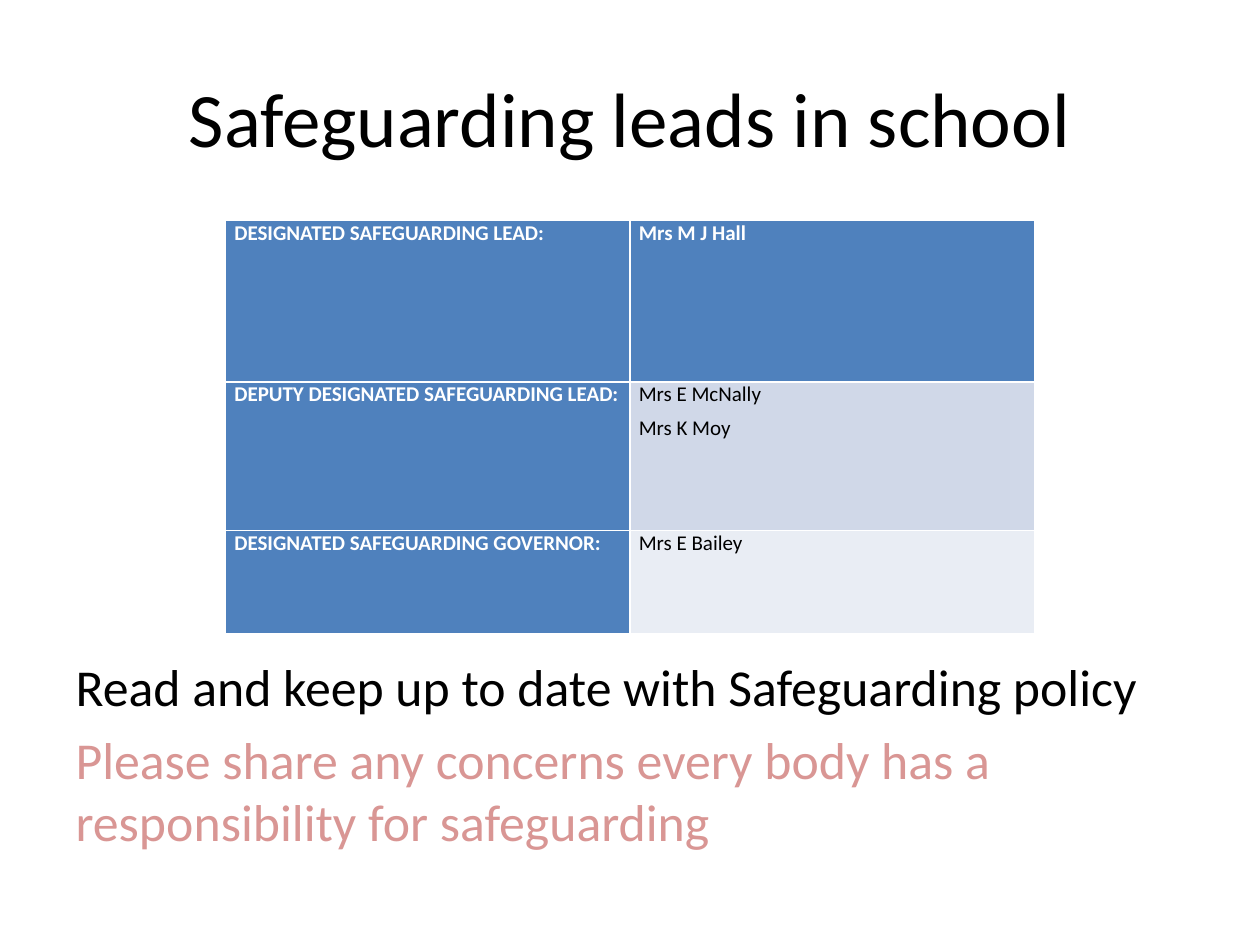
from pptx import Presentation
from pptx.dml.color import RGBColor
from pptx.enum.text import MSO_ANCHOR as ANCHOR, MSO_AUTO_SIZE as AUTOSIZE, PP_ALIGN as ALIGN
from pptx.util import Inches, Pt

BLUE, WHITE, BLACK, PINK = "4F81BD", "FFFFFF", "000000", "D99694"
LEADS = [
    ("DESIGNATED SAFEGUARDING LEAD:", ["Mrs M J Hall"], 1.28, BLUE),
    ("DEPUTY DESIGNATED SAFEGUARDING LEAD:", ["Mrs E McNally", "Mrs K Moy"], 1.18, "D0D8E8"),
    ("DESIGNATED SAFEGUARDING GOVERNOR:", ["Mrs E Bailey"], 0.82, "E9EDF4"),
]
REMINDERS = [
    ("Read and keep up to date with Safeguarding policy", BLACK),
    ("Please share any concerns every body has a responsibility for safeguarding", PINK),
]


def rgb(value):
    """Return the colour for a hex string."""
    return RGBColor.from_string(value)


def apply(obj, values):
    """Set each attribute of obj from a dict."""
    for name, value in values.items():
        setattr(obj, name, value)


def add_line(tf, i, text, size, color, bold=False, **spacing):
    """Write paragraph i of a text frame and return it."""
    p = tf.paragraphs[0] if i == 0 else tf.add_paragraph()
    apply(p, spacing)
    r = p.add_run()
    r.text = text
    apply(r.font, {"name": "Calibri", "size": Pt(size), "bold": bold})
    r.font.color.rgb = rgb(color)
    return p


def place(sp, left, top, width, height):
    """Move and size a placeholder."""
    apply(sp, {"left": Inches(left), "top": Inches(top),
               "width": Inches(width), "height": Inches(height)})


def add_title(s, text):
    """Fill the title placeholder."""
    sp = s.shapes.title
    place(sp, 0.5, 0.3, 9, 1.25)
    apply(sp.text_frame, {"vertical_anchor": ANCHOR.MIDDLE, "auto_size": AUTOSIZE.NONE})
    add_line(sp.text_frame, 0, text, 44, BLACK, alignment=ALIGN.CENTER)


def add_reminders(s):
    """Fill the body placeholder with unbulleted lines below the table."""
    sp = s.placeholders[1]
    place(sp, 0.5, 1.75, 9, 4.95)
    tf = sp.text_frame
    apply(tf, {"margin_top": Inches(3.45), "auto_size": AUTOSIZE.NONE,
               "vertical_anchor": ANCHOR.TOP, "word_wrap": True})
    for i, (text, color) in enumerate(REMINDERS):
        p = add_line(tf, i, text, 29.6, color, space_before=Pt(6))
        pPr = p._p.get_or_add_pPr()
        pPr.set("marL", "0")
        pPr.set("indent", "0")
        pPr.append(pPr.makeelement(
            "{http://schemas.openxmlformats.org/drawingml/2006/main}buNone", {}))


def fill_cell(cell, lines, fill, color, bold):
    """Write and colour one table cell."""
    cell.fill.solid()
    cell.fill.fore_color.rgb = rgb(fill)
    apply(cell, {"margin_left": Inches(0.07), "margin_right": Inches(0.07),
                 "margin_top": 0, "margin_bottom": 0})
    for i, text in enumerate(lines):
        add_line(cell.text_frame, i, text, 12, color, bold,
                 space_before=Pt(2.2), space_after=Pt(2.2))


def add_leads_table(s):
    """Add the table of roles and names."""
    height = sum(lead[2] for lead in LEADS)
    table = s.shapes.add_table(len(LEADS), 2, Inches(1.79), Inches(1.75),
                               Inches(6.42), Inches(height)).table
    table.first_col = True
    for i, (role, names, row_height, fill) in enumerate(LEADS):
        table.rows[i].height = Inches(row_height)
        header = i == 0
        fill_cell(table.cell(i, 0), [role], BLUE, WHITE, True)
        fill_cell(table.cell(i, 1), names, fill, WHITE if header else BLACK, header)


def main():
    """Build and save the slide."""
    prs = Presentation()
    apply(prs, {"slide_width": Inches(10), "slide_height": Inches(7.5)})
    s = prs.slides.add_slide(prs.slide_layouts[1])
    add_title(s, "Safeguarding leads in school")
    add_reminders(s)
    add_leads_table(s)
    prs.save("out.pptx")


if __name__ == "__main__":
    main()
